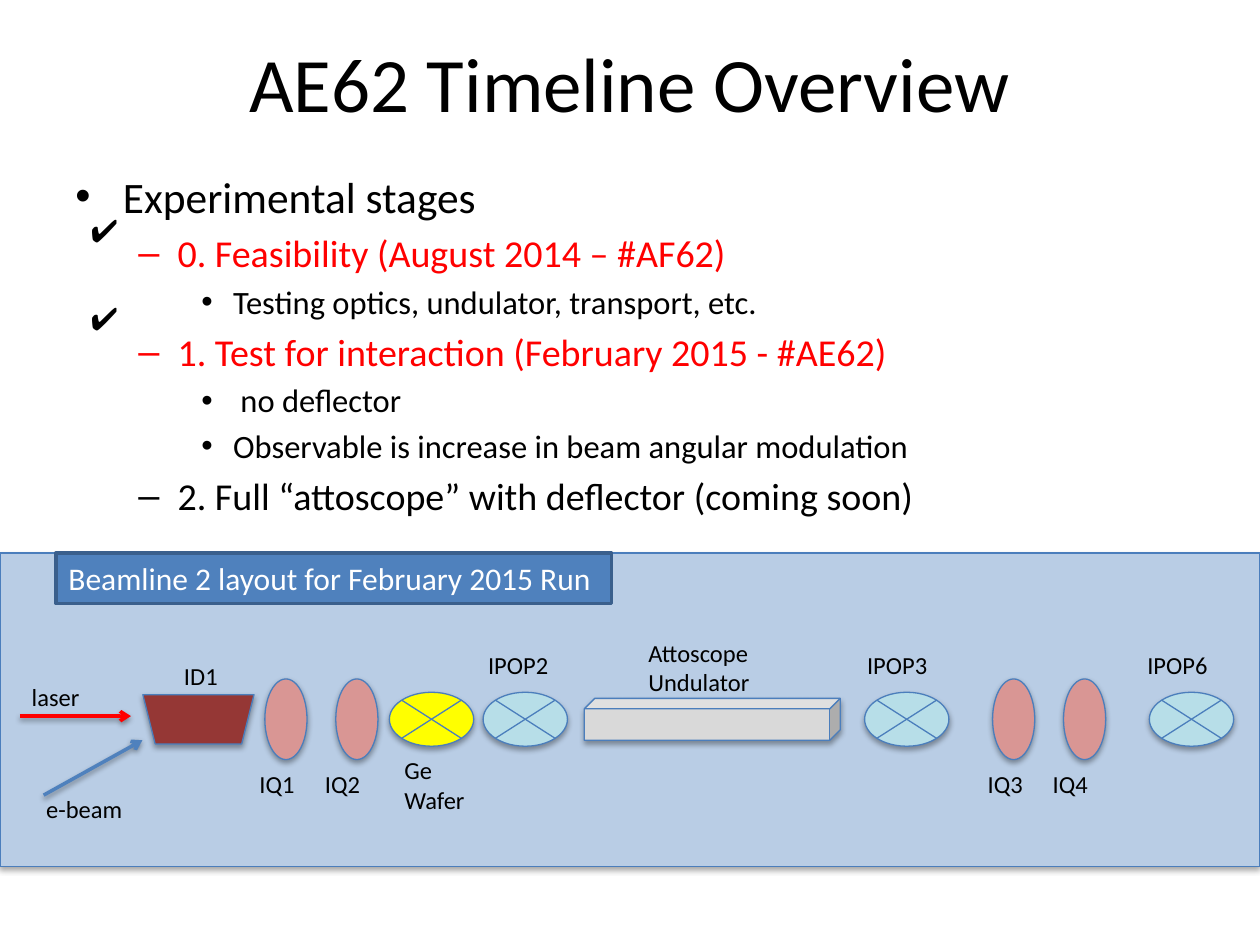
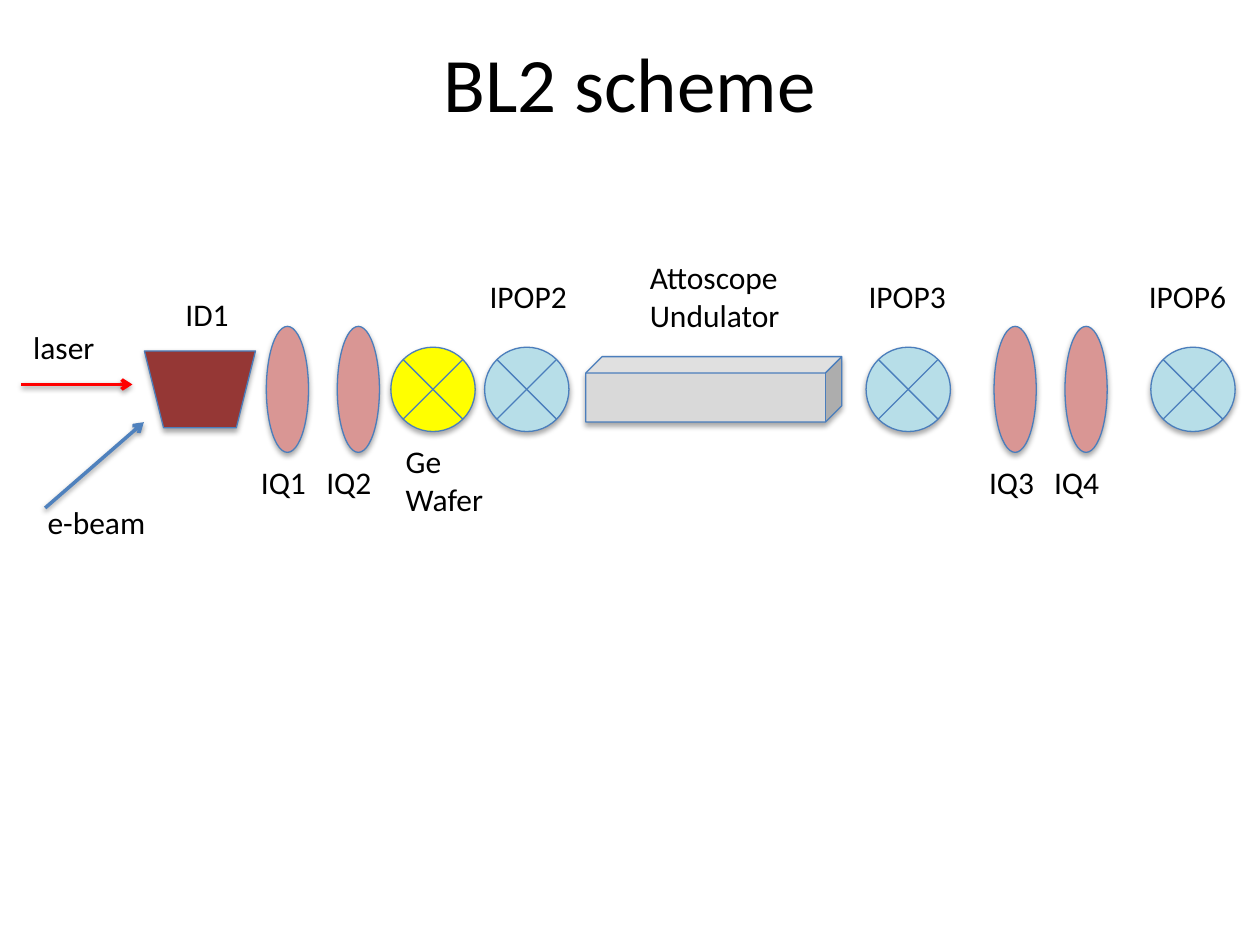
from lxml.etree import SubElement
from pptx import Presentation
from pptx.dml.color import RGBColor
from pptx.enum.shapes import MSO_CONNECTOR, MSO_SHAPE
from pptx.enum.text import MSO_ANCHOR, MSO_AUTO_SIZE, PP_ALIGN
from pptx.oxml.ns import qn
from pptx.util import Cm, Pt

COLORS = {
    "black": "000000", "white": "FFFFFF", "red": "FF0000", "band": "B9CDE5",
    "blue": "4F81BD", "outline": "4B7EBC", "header outline": "3A5F8C",
    "dipole": "953735", "quadrupole": "D99694", "monitor": "B7DEE8",
    "wafer": "FFFF00", "undulator": "D9D9D9",
}

TIMELINE_TITLE = "AE62 Timeline Overview"
SCHEME_TITLE = "BL2 scheme"
BAND_HEADER = "Beamline 2 layout for February 2015 Run"

# level, text, color
STAGES = [
    (0, "Experimental stages", "black"),
    (1, "0. Feasibility (August 2014 – #AF62)", "red"),
    (2, "Testing optics, undulator, transport, etc.", "black"),
    (1, "1. Test for interaction (February 2015 - #AE62)", "red"),
    (2, " no deflector", "black"),
    (2, "Observable is increase in beam angular modulation", "black"),
    (1, "2. Full “attoscope” with deflector (coming soon)", "black"),
]
# size in points, left indent in cm, hanging indent in cm, bullet
LEVELS = [(24.8, 0.96, 0.96, "•"), (21.7, 2.06, 0.79, "–"), (18.6, 3.18, 0.64, "•")]
CHECK_TOPS = [4.12, 5.9]

# Beamline lengths are in cm at full scale; heights are measured from the beam axis.
# kind: preset, color, width, height
KINDS = {
    "dipole": (MSO_SHAPE.TRAPEZOID, "dipole", 2.24, 1.55),
    "quadrupole": (MSO_SHAPE.OVAL, "quadrupole", 0.85, 2.54),
    "monitor": (MSO_SHAPE.FLOWCHART_SUMMING_JUNCTION, "monitor", 1.7, 1.7),
    "wafer": (MSO_SHAPE.FLOWCHART_SUMMING_JUNCTION, "wafer", 1.7, 1.7),
    "undulator": (MSO_SHAPE.CUBE, "undulator", 5.16, 1.32),
}
# kind, left, label, label left, label top, label text width at full scale
ELEMENTS = [
    ("dipole", 2.91, "ID1", 3.49, -2.03, 0.92),
    ("quadrupole", 5.37, "IQ1", 5.01, 1.36, 0.96),
    ("quadrupole", 6.8, "IQ2", 6.33, 1.36, 0.96),
    ("monitor", 9.77, "IPOP2", 9.62, -2.39, 1.6),
    ("wafer", 7.88, "Ge\nWafer", 7.93, 0.94, 1.66),
    ("undulator", 11.81, "Attoscope\nUndulator", 12.85, -2.77, 2.66),
    ("monitor", 17.46, "IPOP3", 17.26, -2.39, 1.6),
    ("quadrupole", 20.04, "IQ3", 19.69, 1.36, 0.96),
    ("quadrupole", 21.47, "IQ4", 21.0, 1.36, 0.96),
    ("monitor", 23.2, "IPOP6", 22.91, -2.39, 1.6),
]
# color, start, end, label, label left, label top, label text width
BEAMS = [
    ("red", (0.43, -0.1), (2.67, -0.1), "laser", 0.42, -1.36, 1.27),
    ("blue", (0.91, 2.39), (2.9, 0.66), "e-beam", 0.71, 2.17, 2.03),
]
FULL_LABEL_SIZE = 18
SIDE_INSET = 0.26
TOP_INSET = 0.13


def rgb(color):
    return RGBColor.from_string(COLORS[color])


def write(shape, text, size=18, color="black", font="Calibri",
          align=PP_ALIGN.LEFT, anchor=MSO_ANCHOR.TOP, wrap=False):
    """Fill a shape with text, one paragraph a line, and return the paragraphs."""
    frame = shape.text_frame
    frame.text = text
    frame.word_wrap = wrap
    frame.vertical_anchor = anchor
    frame.auto_size = MSO_AUTO_SIZE.NONE if wrap else MSO_AUTO_SIZE.SHAPE_TO_FIT_TEXT
    for paragraph in frame.paragraphs:
        paragraph.alignment = align
        font_format = paragraph.runs[0].font
        font_format.name, font_format.size = font, Pt(size)
        font_format.color.rgb = rgb(color)
    return frame.paragraphs


def add_label(shapes, text, left, top, text_width, size=18, **style):
    lines = text.count("\n") + 1
    width = text_width + 2 * SIDE_INSET
    height = lines * size * 1.22 * 2.54 / 72 + 2 * TOP_INSET
    label = shapes.add_textbox(Cm(left), Cm(top), Cm(width), Cm(height))
    write(label, text, size=size, **style)


def cast_shadow(shape, distance, opacity):
    properties = shape._element.spPr
    effects = properties.find(qn("a:effectLst"))
    if effects is None:
        effects = SubElement(properties, qn("a:effectLst"))
    shadow = SubElement(effects, qn("a:outerShdw"), blurRad="40000",
                        dist=str(Pt(distance)), dir="5400000", rotWithShape="0")
    black = SubElement(shadow, qn("a:srgbClr"), val=COLORS["black"])
    SubElement(black, qn("a:alpha"), val=str(opacity * 1000))


def add_block(shapes, preset, left, top, width, height, fill,
              line="outline", line_width=0.75, shadow=True):
    block = shapes.add_shape(preset, Cm(left), Cm(top), Cm(width), Cm(height))
    block.fill.solid()
    block.fill.fore_color.rgb = rgb(fill)
    block.line.color.rgb = rgb(line)
    block.line.width = Pt(line_width)
    block.shadow.inherit = False
    if shadow:
        cast_shadow(block, 1.8, 35)
    return block


def add_beam(shapes, start, end, color):
    beam = shapes.add_connector(MSO_CONNECTOR.STRAIGHT, *map(Cm, start + end))
    beam.line.color.rgb = rgb(color)
    beam.line.width = Pt(2)
    SubElement(beam.line._get_or_add_ln(), qn("a:tailEnd"), type="arrow")
    cast_shadow(beam, 1.6, 38)


def add_beamline(slide, axis, scale=1.0, shift=0.0, label_size=FULL_LABEL_SIZE):
    """Draw the beamline around a height; scale squeezes it vertically only."""
    shapes = slide.shapes.add_group_shape().shapes

    def place(point):
        return point[0] + shift, axis + point[1] * scale

    for kind, left, *_ in ELEMENTS:
        preset, fill, width, height = KINDS[kind]
        block = add_block(shapes, preset, *place((left, -height / 2)),
                          width, height * scale, fill)
        if kind == "dipole":
            block.rotation = 180
    for color, start, end, *_ in BEAMS:
        add_beam(shapes, place(start), place(end), color)
    for *_, text, left, top, text_width in ELEMENTS + BEAMS:
        add_label(shapes, text, *place((left, top)),
                  text_width * label_size / FULL_LABEL_SIZE, size=label_size)


def add_titled_slide(deck, text):
    slide = deck.slides.add_slide(deck.slide_layouts[5])
    title = slide.shapes.title
    title.left, title.top, title.width, title.height = map(Cm, (1.27, 0.06, 22.86, 3.17))
    write(title, text, size=44, align=PP_ALIGN.CENTER, anchor=MSO_ANCHOR.MIDDLE, wrap=True)
    return slide


def add_stages(slide):
    outline = slide.shapes.add_textbox(Cm(1.27), Cm(3.3), Cm(22.86), Cm(6.38))
    paragraphs = write(outline, "\n".join(text for _, text, _ in STAGES), wrap=True)
    for paragraph, (level, _, color) in zip(paragraphs, STAGES):
        size, left, hanging, bullet = LEVELS[level]
        paragraph.level = level
        paragraph.space_before = Pt(size * 0.2 if level else 0)
        font_format = paragraph.runs[0].font
        font_format.size, font_format.color.rgb = Pt(size), rgb(color)
        properties = paragraph._p.get_or_add_pPr()
        properties.set("marL", str(Cm(left)))
        properties.set("indent", str(-Cm(hanging)))
        SubElement(properties, qn("a:buFont"), typeface="Arial")
        SubElement(properties, qn("a:buChar"), char=bullet)


def add_timeline_slide(deck):
    slide = add_titled_slide(deck, TIMELINE_TITLE)
    band_top = 11.15
    add_block(slide.shapes, MSO_SHAPE.RECTANGLE, 0, band_top, 25.4, 6.32, "band")
    add_stages(slide)
    for top in CHECK_TOPS:
        add_label(slide.shapes, "✔", 1.58, top, 0.59, font="Arial")
    add_beamline(slide, axis=14.5, scale=0.64, shift=-0.03, label_size=14)
    header = add_block(slide.shapes, MSO_SHAPE.RECTANGLE, 1.13, band_top, 11.2, 1.02,
                       "blue", line="header outline", line_width=2, shadow=False)
    write(header, BAND_HEADER, color="white")


def main():
    deck = Presentation()
    deck.slide_width, deck.slide_height = Cm(25.4), Cm(19.05)
    add_timeline_slide(deck)
    add_beamline(add_titled_slide(deck, SCHEME_TITLE), axis=7.85)
    deck.save("out.pptx")


if __name__ == "__main__":
    main()
